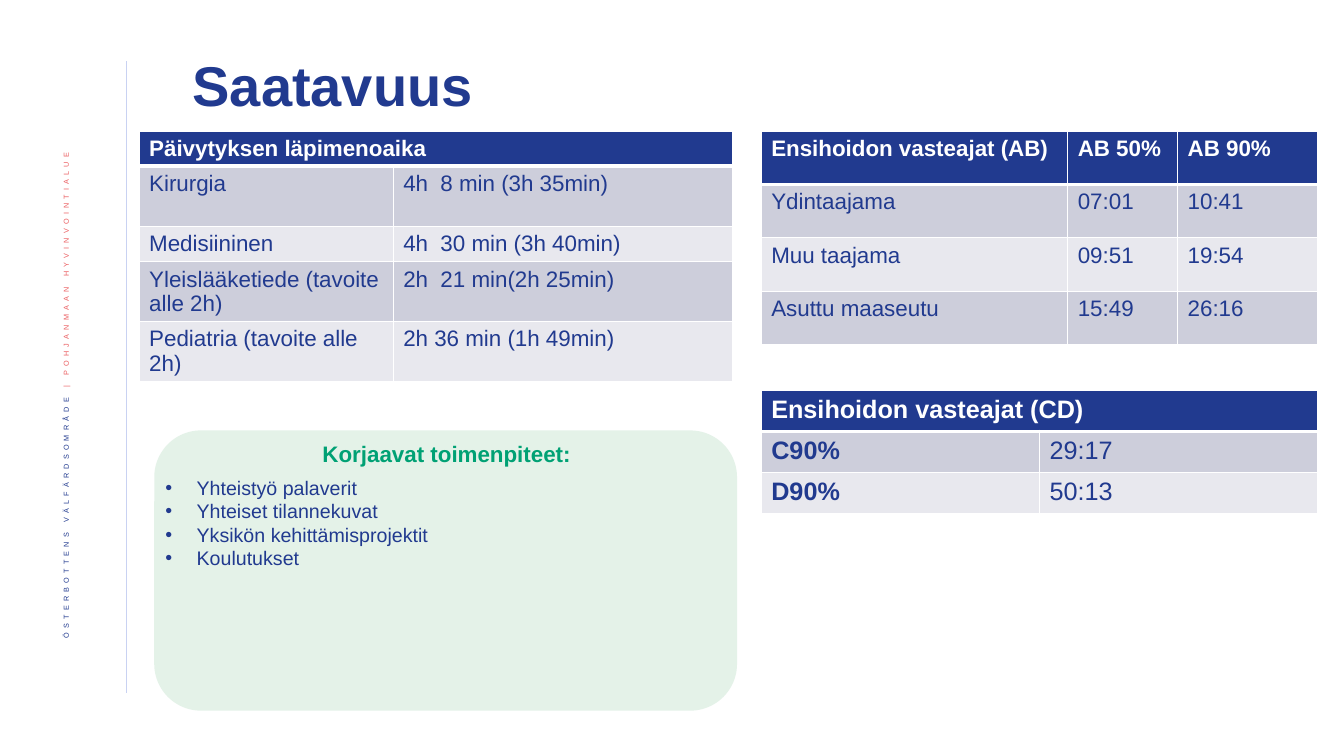
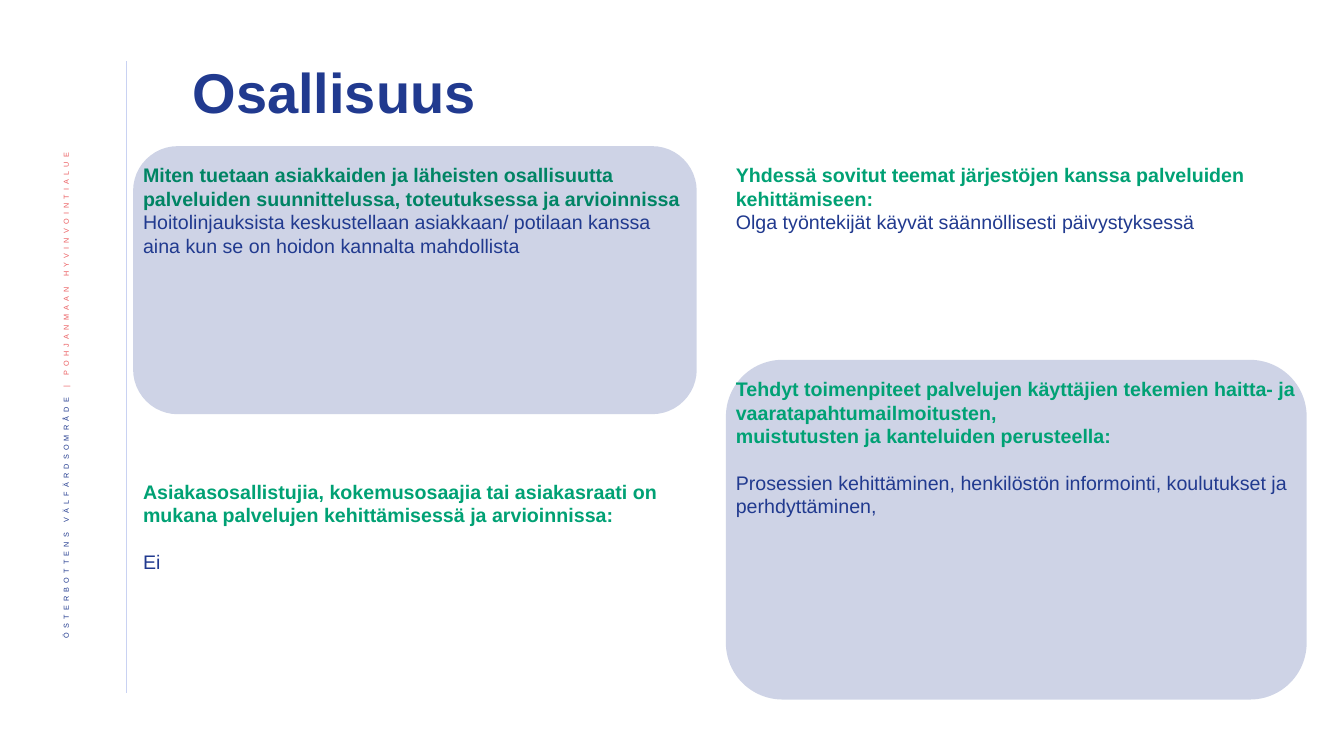
from lxml import etree
from pptx import Presentation
from pptx.dml.color import RGBColor
from pptx.enum import shapes, text
from pptx.oxml import ns
from pptx.util import Inches, Pt

NAVY = RGBColor(0x21, 0x3A, 0x8F)
CORAL = RGBColor(0xEB, 0x5C, 0x5F)
GREEN = RGBColor(0x00, 0xA1, 0x74)
DARK_GREEN = RGBColor(0x00, 0x84, 0x64)
MINT = RGBColor(0x85, 0xC5, 0x98)
PALE_BLUE = RGBColor(0xC9, 0xD2, 0xF2)
WHITE = RGBColor(0xFF, 0xFF, 0xFF)
BAND_DARK = RGBColor(0xCD, 0xCE, 0xDB)
BAND_LIGHT = RGBColor(0xE8, 0xE8, 0xEE)
FONT = "Arial"


def write_run(paragraph, content, color, size, bold=False):
    run = paragraph.add_run()
    run.text = content
    values = {"name": FONT, "size": Pt(size), "bold": bold}
    for name, value in values.items():
        setattr(run.font, name, value)
    run.font.color.rgb = color
    return run


def add_panel(slide, box, color):
    panel = slide.shapes.add_shape(
        shapes.MSO_SHAPE.ROUNDED_RECTANGLE, *map(Inches, box))
    panel.shadow.inherit = False
    panel.line.fill.background()
    panel.fill.solid()
    panel.fill.fore_color.rgb = color
    color_element = panel.element.spPr.find(".//" + ns.qn("a:srgbClr"))
    etree.SubElement(color_element, ns.qn("a:alpha"), val="22000")


presentation = Presentation()
presentation.slide_width = Inches(13.33)
presentation.slide_height = Inches(7.5)
master = presentation.slide_master
layouts = presentation.slide_layouts

availability = presentation.slides.add_slide(layouts[1])
participation = presentation.slides.add_slide(layouts[5])

rule = availability.shapes.add_connector(
    shapes.MSO_CONNECTOR.STRAIGHT,
    Inches(1.25), Inches(0.61), Inches(1.25), Inches(6.88))
rule.line.color.rgb = PALE_BLUE
rule.line.width = Pt(0.5)
etree.SubElement(rule.element.spPr, ns.qn("a:effectLst"))

side_label = availability.shapes.add_textbox(
    Inches(0.42), Inches(1.42), Inches(0.52), Inches(5.73))
side_frame = side_label.text_frame
side_frame.word_wrap = True
side_frame.vertical_anchor = text.MSO_ANCHOR.MIDDLE
side_frame.paragraphs[0].alignment = text.PP_ALIGN.RIGHT
side_frame.paragraphs[0].line_spacing = 0.9
side_label.element.txBody.find(ns.qn("a:bodyPr")).set("vert", "vert270")
for content, color in (("ÖSTERBOTTENS VÄLFÄRDSOMRÅDE ", NAVY),
                       ("| POHJANMAAN HYVINVOINTIALUE", CORAL)):
    run = write_run(side_frame.paragraphs[0], content, color, 9)
    run_properties = run.font._element
    run_properties.set("baseline", "30000")
    run_properties.set("spc", "300")

for number, shape in enumerate((rule, side_label), start=20):
    shape.element.xpath(".//p:cNvPr")[0].set("id", str(number))
    master.shapes.element.insert_element_before(shape.element, "p:extLst")

for slide, heading, width, height in (
        (availability, "Saatavuus", 10.98, 0.85),
        (participation, "Osallisuus", 9.98, 0.99)):
    title = slide.shapes.title
    position = {"left": 1.81, "top": 0.45, "width": width, "height": height}
    for name, value in position.items():
        setattr(title, name, Inches(value))
    title.text_frame.vertical_anchor = text.MSO_ANCHOR.MIDDLE
    title.text_frame.auto_size = text.MSO_AUTO_SIZE.NONE
    paragraph = title.text_frame.paragraphs[0]
    paragraph.alignment = text.PP_ALIGN.LEFT
    paragraph.line_spacing = 0.9
    write_run(paragraph, heading, NAVY, 40, True)

tables = [
    {"left": 1.38, "top": 1.3, "size": 16, "columns": [2.52, 3.37],
     "heights": [0.34, 0.6, 0.35, 0.59, 0.59], "bold_labels": False,
     "rows": [["Päivytyksen läpimenoaika"],
              ["Kirurgia", "4h  8 min (3h 35min)"],
              ["Medisiininen", "4h  30 min (3h 40min)"],
              ["Yleislääketiede (tavoite alle 2h)", "2h  21 min(2h 25min)"],
              ["Pediatria (tavoite alle 2h)", "2h 36 min (1h 49min)"]]},
    {"left": 7.55, "top": 1.3, "size": 16, "columns": [3.04, 1.09, 1.39],
     "heights": [0.53] * 4, "bold_labels": False,
     "rows": [["Ensihoidon vasteajat (AB)", "AB 50%", "AB 90%"],
              ["Ydintaajama", "07:01", "10:41"],
              ["Muu taajama", "09:51", "19:54"],
              ["Asuttu maaseutu", "15:49", "26:16"]]},
    {"left": 7.55, "top": 3.87, "size": 18, "columns": [2.76, 2.76],
     "heights": [0.41] * 3, "bold_labels": True,
     "rows": [["Ensihoidon vasteajat (CD)"],
              ["C90%", "29:17"],
              ["D90%", "50:13"]]},
]
for data in tables:
    rows, columns, heights = data["rows"], data["columns"], data["heights"]
    table = availability.shapes.add_table(
        len(rows), len(columns), Inches(data["left"]), Inches(data["top"]),
        Inches(sum(columns)), Inches(sum(heights))).table
    for column, width in zip(table.columns, columns):
        column.width = Inches(width)
    for row, height in zip(table.rows, heights):
        row.height = Inches(height)
    if len(rows[0]) == 1:
        table.cell(0, 0).merge(table.cell(0, len(columns) - 1))
    for row_index in range(len(rows)):
        for column_index in range(len(columns)):
            cell = table.cell(row_index, column_index)
            header = row_index == 0
            properties = cell._tc.get_or_add_tcPr()
            for side in "LRTB":
                thick = (header and side == "B") or (row_index == 1 and side == "T")
                border = etree.SubElement(
                    properties, ns.qn("a:ln" + side), w=str(Pt(3 if thick else 1)))
                fill = etree.SubElement(border, ns.qn("a:solidFill"))
                etree.SubElement(fill, ns.qn("a:srgbClr"), val=str(WHITE))
            cell.fill.solid()
            band = BAND_DARK if row_index % 2 else BAND_LIGHT
            cell.fill.fore_color.rgb = NAVY if header else band
            if column_index < len(rows[row_index]):
                bold = header or (data["bold_labels"] and column_index == 0)
                write_run(cell.text_frame.paragraphs[0],
                          rows[row_index][column_index],
                          WHITE if header else NAVY, data["size"], bold)

add_panel(availability, (1.53, 4.27, 5.78, 2.78), MINT)
actions = availability.placeholders[1]
position = {"left": 1.54, "top": 4.32, "width": 5.78, "height": 1.4}
for name, value in position.items():
    setattr(actions, name, Inches(value))
availability.shapes.element.append(actions.element)
actions_frame = actions.text_frame
actions_frame.auto_size = text.MSO_AUTO_SIZE.NONE
actions_frame.vertical_anchor = text.MSO_ANCHOR.TOP
action_lines = ["Korjaavat toimenpiteet:", "Yhteistyö palaverit",
                "Yhteiset tilannekuvat", "Yksikön kehittämisprojektit",
                "Koulutukset"]
for index, line in enumerate(action_lines):
    heading = index == 0
    paragraph = (actions_frame.paragraphs[0] if heading
                 else actions_frame.add_paragraph())
    paragraph.alignment = (text.PP_ALIGN.CENTER if heading
                           else text.PP_ALIGN.LEFT)
    paragraph.space_before = Pt(0)
    paragraph.space_after = Pt(6 if heading else 0)
    indent = Inches(0 if heading else 0.31)
    properties = paragraph._p.get_or_add_pPr()
    properties.set("marL", str(indent))
    properties.set("indent", str(-indent))
    if heading:
        etree.SubElement(properties, ns.qn("a:buNone"))
        write_run(paragraph, line, GREEN, 16, True)
    else:
        etree.SubElement(properties, ns.qn("a:buFont"), typeface=FONT)
        etree.SubElement(properties, ns.qn("a:buChar"), char="•")
        write_run(paragraph, line, NAVY, 14)

LEFT_COLUMN = (1.32, 5.59)
RIGHT_COLUMN = (7.2, 5.76)
topics = [
    {"column": LEFT_COLUMN, "top": 1.57, "height": 1.28, "panel": 2.66,
     "color": DARK_GREEN, "gap": 0,
     "heading": ["Miten tuetaan asiakkaiden ja läheisten osallisuutta "
                 "palveluiden suunnittelussa, toteutuksessa ja arvioinnissa"],
     "answer": "Hoitolinjauksista keskustellaan asiakkaan/ potilaan kanssa "
               "aina kun se on hoidon kannalta mahdollista"},
    {"column": RIGHT_COLUMN, "top": 1.57, "height": 0.81, "panel": None,
     "color": GREEN, "gap": 0,
     "heading": ["Yhdessä sovitut teemat järjestöjen kanssa palveluiden "
                 "kehittämiseen:"],
     "answer": "Olga työntekijät käyvät säännöllisesti päivystyksessä"},
    {"column": LEFT_COLUMN, "top": 4.71, "height": 1.04, "panel": None,
     "color": GREEN, "gap": 16.5,
     "heading": ["Asiakasosallistujia, kokemusosaajia tai asiakasraati on "
                 "mukana palvelujen kehittämisessä ja arvioinnissa:"],
     "answer": "Ei"},
    {"column": RIGHT_COLUMN, "top": 3.69, "height": 1.75, "panel": 3.37,
     "color": GREEN, "gap": 16.5,
     "heading": ["Tehdyt toimenpiteet palvelujen käyttäjien tekemien haitta- "
                 "ja vaaratapahtumailmoitusten,",
                 "muistutusten ja kanteluiden perusteella:"],
     "answer": "Prosessien kehittäminen, henkilöstön informointi, koulutukset "
               "ja perhdyttäminen,"},
]
for topic in topics:
    left, width = topic["column"]
    if topic["panel"]:
        add_panel(participation,
                  (left, topic["top"] - 0.12, width, topic["panel"]), NAVY)
    topic_box = participation.shapes.add_textbox(
        Inches(left), Inches(topic["top"]), Inches(width), Inches(topic["height"]))
    frame = topic_box.text_frame
    frame.word_wrap = True
    for index, line in enumerate(topic["heading"]):
        paragraph = frame.add_paragraph() if index else frame.paragraphs[0]
        write_run(paragraph, line, topic["color"], 14, True)
    answer = frame.add_paragraph()
    answer.space_before = Pt(topic["gap"])
    write_run(answer, topic["answer"], NAVY, 14)

presentation.save("out.pptx")
